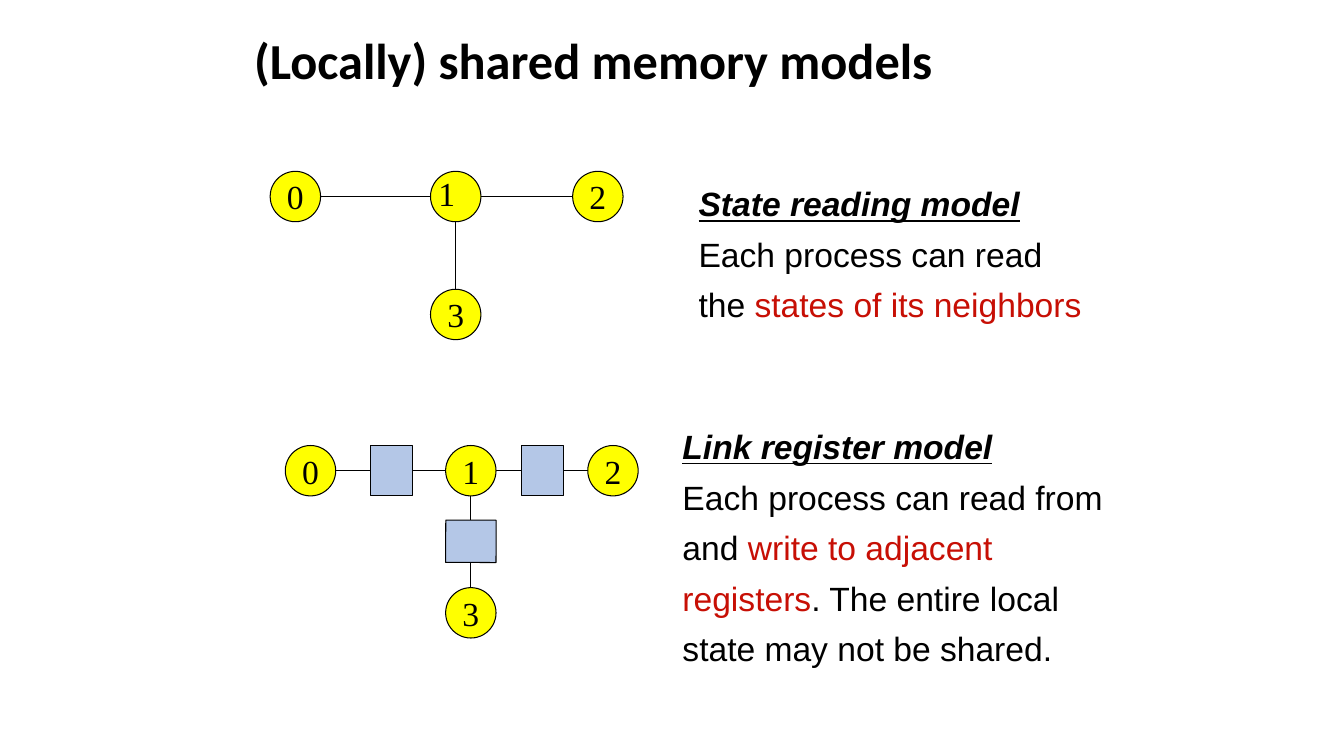
from lxml import etree
from pptx import Presentation
from pptx import util as u
from pptx.dml.color import RGBColor
from pptx.enum import shapes, text
from pptx.oxml.ns import qn

PX = 9144
NODE = 50
REGISTER_WIDTH = 42
COLORS = {
    "ink": "000000",
    "node": "FFFF00",
    "register": "B4C7E7",
    "accent": "C70F05",
}


def px(*lengths):
    return [u.Emu(length * PX) for length in lengths]


def color(name):
    return RGBColor.from_string(COLORS[name])


def style_run(run, font, size, name="ink"):
    run.font.name = font
    run.font.size = u.Pt(size)
    run.font.color.rgb = color(name)


def add_title(slide, wording):
    title = slide.shapes.title
    title.left, title.top, title.width, title.height = px(242, 0, 850, 125)
    frame = title.text_frame
    frame.text = wording
    frame.auto_size = text.MSO_AUTO_SIZE.NONE
    frame.vertical_anchor = text.MSO_ANCHOR.MIDDLE
    paragraph = frame.paragraphs[0]
    paragraph.alignment = text.PP_ALIGN.LEFT
    paragraph.line_spacing = 0.9
    style_run(paragraph.runs[0], "Calibri", 36)
    paragraph.runs[0].font.bold = True


def add_outlined(slide, kind, box, fill):
    shape = slide.shapes.add_shape(kind, *px(*box))
    shape.shadow.inherit = False
    shape.fill.solid()
    shape.fill.fore_color.rgb = color(fill)
    shape.line.color.rgb = color("ink")
    shape.line.width = u.Pt(0.75)
    return shape


def write_label(shape, label):
    frame = shape.text_frame
    frame.word_wrap = False
    frame.text = label
    style_run(frame.paragraphs[0].runs[0], "Times New Roman", 24)
    return frame


def add_node(slide, left, top, label=""):
    node = add_outlined(slide, shapes.MSO_SHAPE.OVAL, (left, top, NODE, NODE), "node")
    if label:
        frame = write_label(node, label)
        frame.vertical_anchor = text.MSO_ANCHOR.MIDDLE
        frame.paragraphs[0].alignment = text.PP_ALIGN.CENTER


def add_link(slide, *ends):
    link = slide.shapes.add_connector(shapes.MSO_CONNECTOR.STRAIGHT, *px(*ends))
    link.line.color.rgb = color("ink")
    link.line.width = u.Pt(0.75)
    etree.SubElement(link._element.spPr, qn("a:effectLst"))


def add_network(slide, left, top, drop, hub_label):
    hub = left + 159
    right = left + 300
    bottom = top + drop
    row = top + NODE // 2
    column = hub + NODE // 2
    add_link(slide, left + NODE, row, hub, row)
    add_link(slide, hub + NODE, row, right, row)
    add_link(slide, column, top + NODE, column, bottom)
    add_node(slide, left, top, "0")
    add_node(slide, hub, top, hub_label)
    add_node(slide, right, top, "2")
    add_node(slide, hub, bottom, "3")


def add_register(slide, left, top, rotation=0):
    box = (left, top, REGISTER_WIDTH, NODE)
    register = add_outlined(slide, shapes.MSO_SHAPE.RECTANGLE, box, "register")
    register.rotation = rotation


def add_free_label(slide, box, label):
    textbox = slide.shapes.add_textbox(*px(*box))
    write_label(textbox, label).auto_size = text.MSO_AUTO_SIZE.SHAPE_TO_FIT_TEXT


def add_description(slide, box, heading, lines):
    frame = slide.shapes.add_textbox(*px(*box)).text_frame
    frame.word_wrap = True
    frame.auto_size = text.MSO_AUTO_SIZE.SHAPE_TO_FIT_TEXT
    for index, parts in enumerate([[(heading, "ink")], *lines]):
        paragraph = frame.add_paragraph() if index else frame.paragraphs[0]
        paragraph.line_spacing = 1.25
        for wording, name in parts:
            run = paragraph.add_run()
            run.text = wording
            style_run(run, "Arial", 24, name)
    font = frame.paragraphs[0].runs[0].font
    font.bold = font.italic = font.underline = True


def main():
    presentation = Presentation()
    presentation.slide_width, presentation.slide_height = px(1333, 750)
    slide = presentation.slides.add_slide(presentation.slide_layouts[5])
    add_title(slide, "(Locally) shared memory models")

    add_network(slide, 268, 170, 117, "")
    add_free_label(slide, (425, 167, 37, 50), "1")
    add_description(slide, (683, 167, 442, 160), "State reading model", [
        [("Each process can read", "ink")],
        [("the ", "ink"), ("states of its neighbors", "accent")],
    ])

    add_network(slide, 283, 442, 141, "1")
    add_description(slide, (667, 408, 442, 260), "Link register model", [
        [("Each process can read from", "ink")],
        [
            ("and ", "ink"),
            ("write to adjacent registers", "accent"),
            (". The entire local state may not be shared.", "ink"),
        ],
    ])
    add_register(slide, 367, 442)
    add_register(slide, 517, 442)
    add_register(slide, 446, 512, 90.2)

    presentation.save("out.pptx")


if __name__ == "__main__":
    main()
